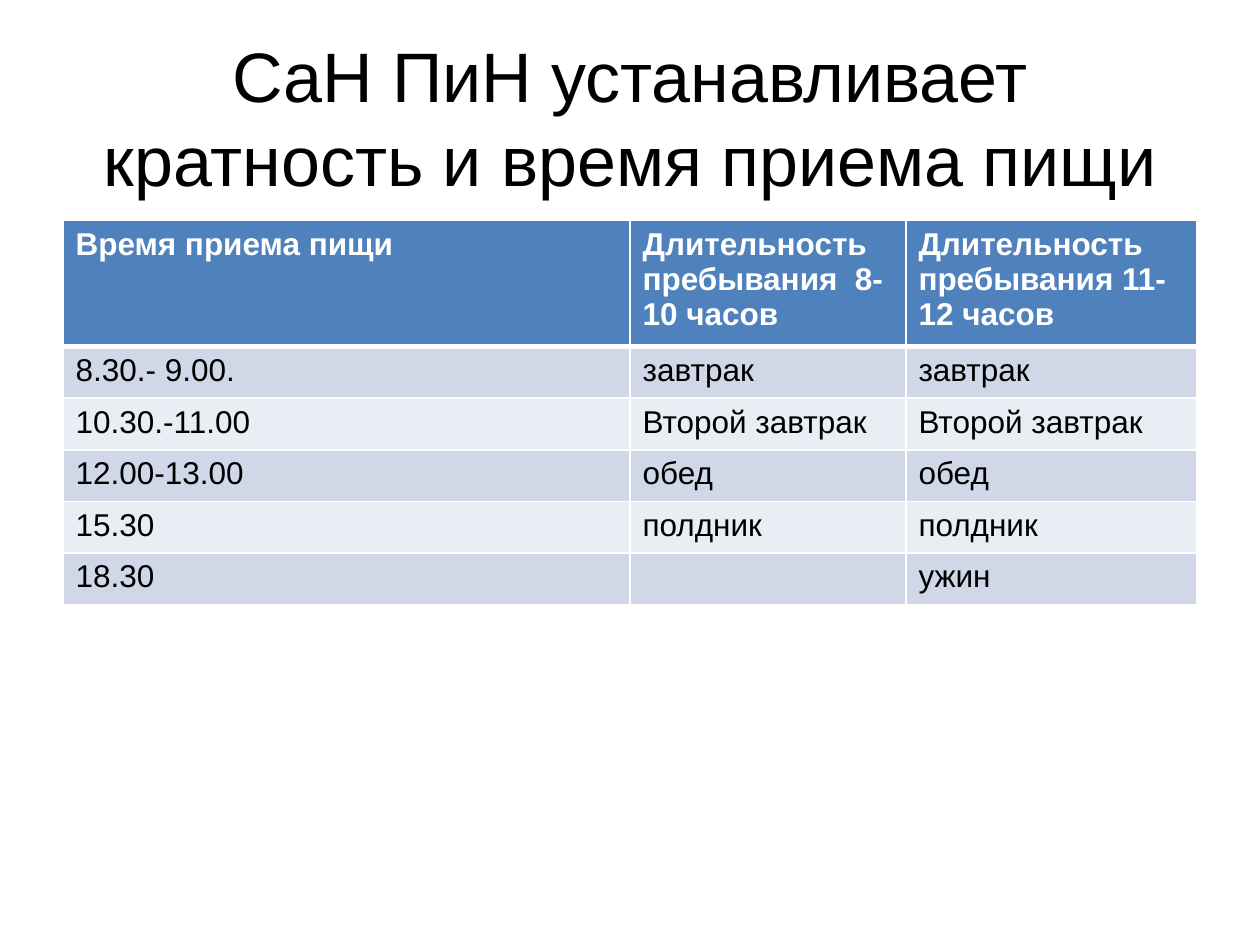
from dataclasses import dataclass

from lxml.etree import SubElement
from pptx import Presentation
from pptx.dml.color import RGBColor
from pptx.enum.text import MSO_ANCHOR as Anchor, PP_ALIGN as Align
from pptx.oxml.ns import qn
from pptx.util import Inches, Pt

TITLE = "СаН ПиН устанавливает кратность и время приема пищи"
MEALS = [
    ("Время приема пищи", "Длительность пребывания  8-10 часов",
     "Длительность пребывания 11-12 часов"),
    ("8.30.- 9.00.", "завтрак", "завтрак"),
    ("10.30.-11.00", "Второй завтрак", "Второй завтрак"),
    ("12.00-13.00", "обед", "обед"),
    ("15.30", "полдник", "полдник"),
    ("18.30", "", "ужин"),
]
COLUMN_WIDTHS = (4.5, 2.19, 2.31)
HEADER_HEIGHT, MEAL_HEIGHT = 0.93, 0.41
LEFT, WIDTH = 0.5, 9
TITLE_TOP, TITLE_HEIGHT, TABLE_TOP = 0.3, 1.25, 1.75


@dataclass(frozen=True)
class Theme:
    font: str = "Arial"
    title_size: float = 40
    cell_size: float = 18
    ink: str = "000000"
    header_ink: str = "FFFFFF"
    header_fill: str = "4F81BD"
    bands: tuple = ("D0D8E8", "E9EDF4")
    grid: str = "FFFFFF"
    grid_width: float = 1
    header_rule_width: float = 3


THEME = Theme()


def write(frame, text, size, color=THEME.ink, bold=False, align=Align.LEFT):
    frame.word_wrap = True
    paragraph = frame.paragraphs[0]
    paragraph.alignment = align
    paragraph.font.size = Pt(size)
    if text:
        run = paragraph.add_run()
        run.text = text
        run.font.name = THEME.font
        run.font.size = Pt(size)
        run.font.bold = bold
        run.font.color.rgb = RGBColor.from_string(color)


def set_borders(cell, **widths):
    """Draw the cell's sides; borders must come before the fill in the XML."""
    properties = cell._tc.get_or_add_tcPr()
    for side in ("L", "R", "T", "B"):
        width = widths.get(side, THEME.grid_width)
        line = SubElement(properties, qn(f"a:ln{side}"), w=str(Pt(width)))
        fill = SubElement(line, qn("a:solidFill"))
        SubElement(fill, qn("a:srgbClr"), val=THEME.grid)


def add_title(slide):
    title = slide.shapes.add_textbox(
        Inches(LEFT), Inches(TITLE_TOP), Inches(WIDTH), Inches(TITLE_HEIGHT))
    title.text_frame.vertical_anchor = Anchor.MIDDLE
    write(title.text_frame, TITLE, THEME.title_size, align=Align.CENTER)


def add_meal_table(slide):
    heights = [HEADER_HEIGHT] + [MEAL_HEIGHT] * (len(MEALS) - 1)
    table = slide.shapes.add_table(
        len(MEALS), len(COLUMN_WIDTHS), Inches(LEFT), Inches(TABLE_TOP),
        Inches(WIDTH), Inches(sum(heights))).table
    for column, width in zip(table.columns, COLUMN_WIDTHS):
        column.width = Inches(width)
    for row_number, (row, height, meal) in enumerate(zip(table.rows, heights, MEALS)):
        row.height = Inches(height)
        is_header = row_number == 0
        fill = THEME.header_fill if is_header else THEME.bands[(row_number - 1) % 2]
        ink = THEME.header_ink if is_header else THEME.ink
        rule = {0: "B", 1: "T"}.get(row_number)
        borders = {rule: THEME.header_rule_width} if rule else {}
        for cell, text in zip(row.cells, meal):
            set_borders(cell, **borders)
            cell.fill.solid()
            cell.fill.fore_color.rgb = RGBColor.from_string(fill)
            write(cell.text_frame, text, THEME.cell_size, color=ink, bold=is_header)


def main():
    deck = Presentation()
    deck.slide_width, deck.slide_height = Inches(10), Inches(7.5)
    slide = deck.slides.add_slide(deck.slide_layouts[6])
    add_title(slide)
    add_meal_table(slide)
    deck.save("out.pptx")


if __name__ == "__main__":
    main()
